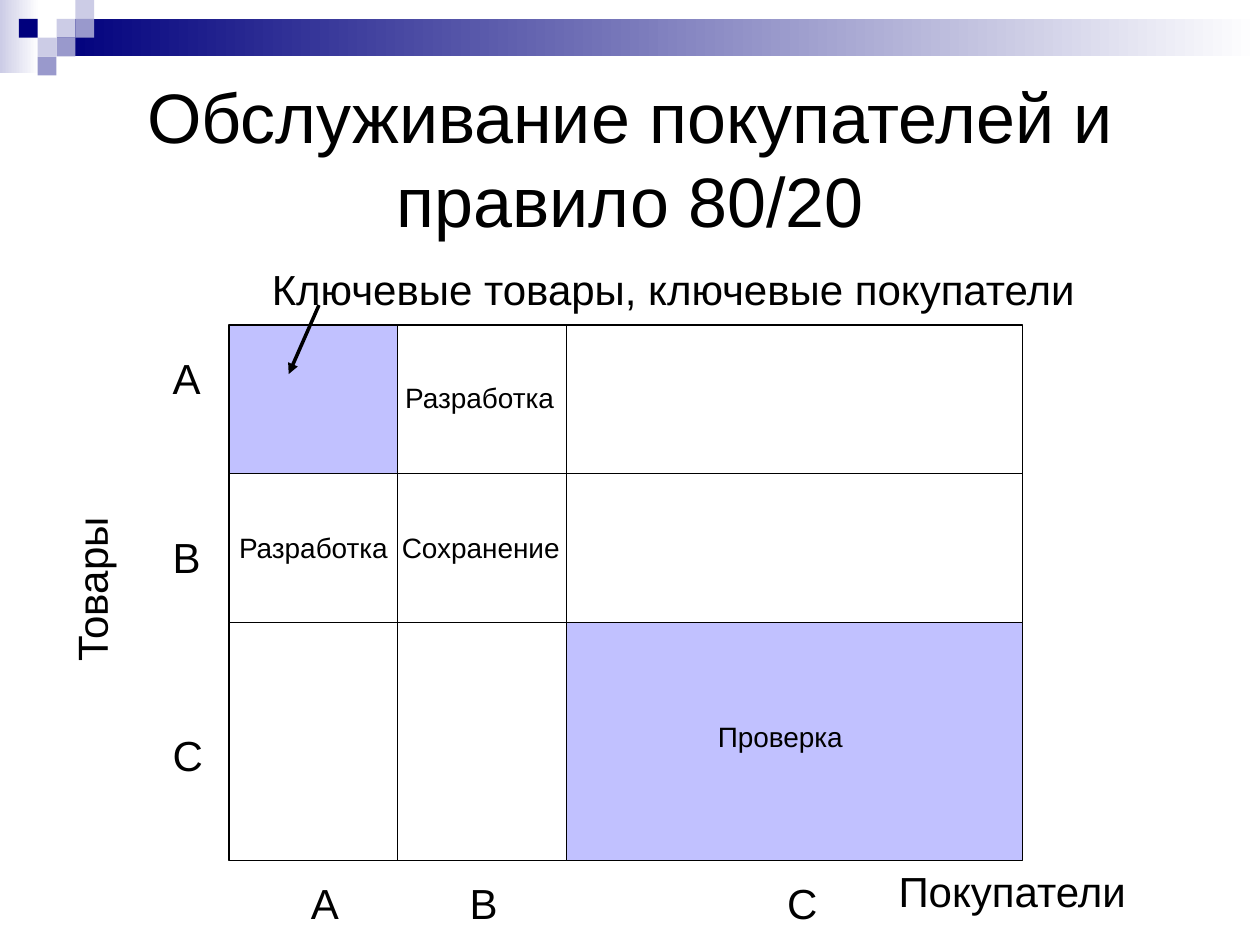
from lxml import etree
from pptx import Presentation
from pptx.dml.color import RGBColor
from pptx.enum.shapes import MSO_CONNECTOR, MSO_SHAPE
from pptx.enum.text import MSO_ANCHOR, PP_ALIGN
from pptx.oxml.ns import qn
from pptx.util import Cm, Pt

RECT = MSO_SHAPE.RECTANGLE
STRAIGHT = MSO_CONNECTOR.STRAIGHT
LEFT, CENTER = PP_ALIGN.LEFT, PP_ALIGN.CENTER
MIDDLE = MSO_ANCHOR.MIDDLE

BLACK = RGBColor(0x00, 0x00, 0x00)
WHITE = RGBColor(0xFF, 0xFF, 0xFF)
NAVY = RGBColor(0x00, 0x00, 0x7D)
PALE = RGBColor(0xCC, 0xCC, 0xE6)
LILAC = RGBColor(0x99, 0x99, 0xCC)
ACCENT = RGBColor(0x99, 0x99, 0xFF)


def write(tf, text, size=24, align=LEFT, color=BLACK, font="Arial"):
    tf.word_wrap = True
    p = tf.paragraphs[0]
    p.alignment = align
    r = p.add_run()
    r.text = text
    r.font.name, r.font.size, r.font.color.rgb = font, Pt(size), color


class Builder:
    def __init__(self, slide):
        self.s = slide

    def title(self, text, x, y, w, h):
        sp = self.s.shapes.title
        sp.left, sp.top, sp.width, sp.height = Cm(x), Cm(y), Cm(w), Cm(h)
        sp.text_frame.vertical_anchor = MIDDLE
        write(sp.text_frame, text, size=40, align=CENTER)

    def rect(self, x, y, w, h, fill=None, alpha=None, line=None):
        sp = self.s.shapes.add_shape(RECT, Cm(x), Cm(y), Cm(w), Cm(h))
        sp.shadow.inherit = False
        if fill is None:
            sp.fill.background()
        else:
            sp.fill.solid()
            sp.fill.fore_color.rgb = fill
        if alpha:
            clr = sp.fill._xPr.find(qn("a:solidFill"))[0]
            etree.SubElement(clr, qn("a:alpha"), val=str(alpha * 1000))
        if line is None:
            sp.line.fill.background()
        else:
            sp.line.color.rgb, sp.line.width = line, Pt(0.75)
        return sp

    def fade(self, x, y, w, h, color):
        """Rectangle running from color on the left to white on the right."""
        fill = self.rect(x, y, w, h).fill
        fill.gradient()
        fill.gradient_angle = 0
        for stop, rgb in zip(fill.gradient_stops, (color, WHITE)):
            stop.color.rgb = rgb

    def text(self, text, x, y, w, h=1.27, rotation=0, **fmt):
        tb = self.s.shapes.add_textbox(Cm(x), Cm(y), Cm(w), Cm(h))
        tb.rotation = rotation
        write(tb.text_frame, text, **fmt)

    def arrow(self, x1, y1, x2, y2):
        c = self.s.shapes.add_connector(STRAIGHT, Cm(x1), Cm(y1), Cm(x2), Cm(y2))
        c.line.color.rgb, c.line.width = BLACK, Pt(2)
        etree.SubElement(c.line._get_or_add_ln(), qn("a:tailEnd"), type="triangle")
        etree.SubElement(c._element.spPr, qn("a:effectLst"))


def draw_header(b):
    unit = 0.38
    b.fade(0, 0, 0.79, 1.47, PALE)
    b.fade(1.14, unit, 24.26, 0.76, NAVY)
    squares = [(3, 1, PALE), (4, 0, PALE), (4, 1, LILAC), (2, 2, PALE),
               (1, 1, NAVY), (3, 2, LILAC), (2, 3, LILAC)]
    for col, row, color in squares:
        b.rect(col * unit, row * unit, unit, unit, color)


def draw_matrix(b):
    widths, heights = (3.4, 3.4, 9.2), (3, 3, 4.8)
    key_cells = {(0, 0), (2, 2)}
    y = 6.55
    for row, h in enumerate(heights):
        x = 4.62
        for col, w in enumerate(widths):
            key = (row, col) in key_cells
            b.rect(x, y, w, h, ACCENT if key else None,
                   alpha=60 if key else None, line=BLACK)
            x += w
        y += h


def draw_labels(b):
    for letter, y, x in zip("АВС", (6.98, 10.58, 14.58), (6.02, 9.22, 15.62)):
        b.text(letter, 3.23, y, 1.2)
        b.text(letter, x, 17.57, 1.2)
    for action, x, y in (("Разработка", 7.92, 7.54), ("Разработка", 4.57, 10.57),
                         ("Сохранение", 7.85, 10.57), ("Проверка", 14.22, 14.38)):
        b.text(action, x, y, 3.81, 0.94, size=16)
    b.text("Ключевые товары, ключевые покупатели", 5.23, 5.18, 18.21)
    b.arrow(6.43, 6.15, 5.82, 7.54)
    b.text("Товары", -0.32, 11.25, 4.32, rotation=270, align=CENTER)
    b.text("Покупатели", 17.6, 17.32, 5.61, align=CENTER)


def main():
    prs = Presentation()
    prs.slide_width, prs.slide_height = Cm(25.4), Cm(19.05)
    b = Builder(prs.slides.add_slide(prs.slide_layouts[5]))
    draw_header(b)
    b.title("Обслуживание покупателей и правило 80/20", 1.27, 1.27, 22.86, 3.81)
    draw_matrix(b)
    draw_labels(b)
    prs.save("out.pptx")


if __name__ == "__main__":
    main()
